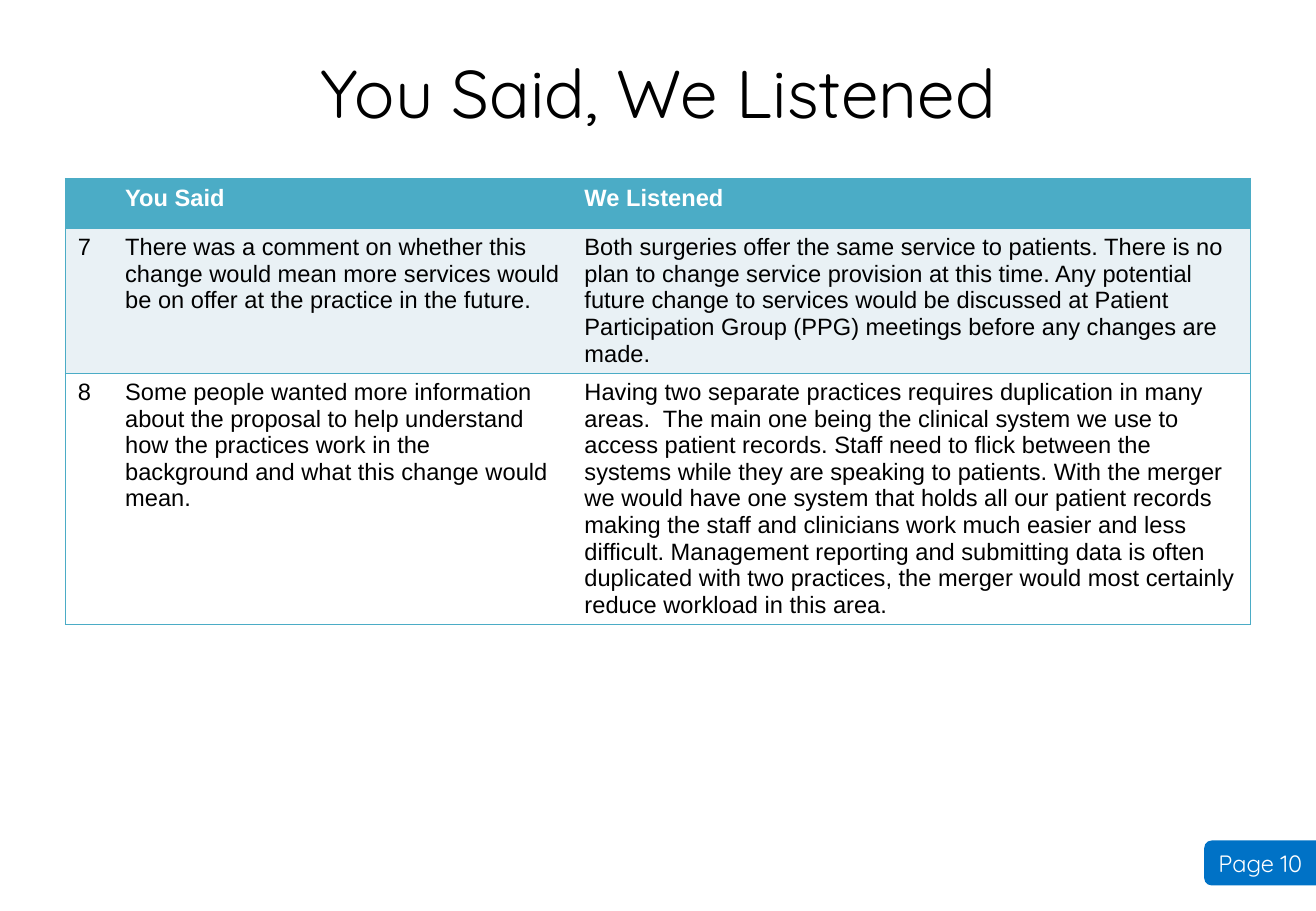
from lxml.etree import SubElement
from pptx import Presentation
from pptx.dml.color import RGBColor
from pptx.enum.shapes import MSO_SHAPE
from pptx.enum.text import MSO_ANCHOR, MSO_AUTO_SIZE, PP_ALIGN
from pptx.oxml.ns import qn
from pptx.util import Emu, Pt

EMU_PER_PX = 9144  # 100 px to the inch
TEAL, PALE, WHITE, BLACK, BLUE = "4BACC6", "E9F1F5", "FFFFFF", "000000", "0072C6"

COLUMN_WIDTHS = [39, 378, 558]
ROW_HEIGHTS = [41, 119, 207]
ROW_FILLS = [TEAL, PALE, WHITE]
FEEDBACK = [
    ["", "You Said", "We Listened"],
    [
        "7",
        "There was a comment on whether this change would mean more services "
        "would be on offer at the practice in the future.",
        "Both surgeries offer the same service to patients. There is no plan to "
        "change service provision at this time. Any potential future change to "
        "services would be discussed at Patient Participation Group (PPG) "
        "meetings before any changes are made.",
    ],
    [
        "8",
        "Some people wanted more information about the proposal to help "
        "understand how the practices work in the background and what this "
        "change would mean.",
        "Having two separate practices requires duplication in many areas.  The "
        "main one being the clinical system we use to access patient records. "
        "Staff need to flick between the systems while they are speaking to "
        "patients. With the merger we would have one system that holds all our "
        "patient records making the staff and clinicians work much easier and "
        "less difficult. Management reporting and submitting data is often "
        "duplicated with two practices, the merger would most certainly reduce "
        "workload in this area.",
    ],
]


def px(length):
    return Emu(length * EMU_PER_PX)


def color(value):
    return RGBColor.from_string(value)


def write(frame, text, font="Arial", size=14, fill=BLACK, bold=False,
          align=PP_ALIGN.LEFT):
    para = frame.paragraphs[0]
    para.alignment = align
    span = para.add_run()
    span.text = text
    span.font.name = font
    span.font.size = Pt(size)
    span.font.bold = bold
    span.font.color.rgb = color(fill)


def set_borders(cell, visible_sides):
    properties = cell._tc.get_or_add_tcPr()
    for side in "LRTB":
        line = SubElement(properties, qn(f"a:ln{side}"), w=str(Pt(1)))
        if side in visible_sides:
            paint = SubElement(line, qn("a:solidFill"))
            SubElement(paint, qn("a:srgbClr"), val=TEAL)
        else:
            SubElement(line, qn("a:noFill"))


def add_title(page, text):
    title = page.shapes.title
    title.left, title.top, title.width, title.height = map(px, (54, 13, 975, 125))
    title.text_frame.vertical_anchor = MSO_ANCHOR.MIDDLE
    write(title.text_frame, text, font="Quicksand", size=40, align=PP_ALIGN.CENTER)


def add_feedback_table(page):
    table = page.shapes.add_table(
        len(FEEDBACK), len(COLUMN_WIDTHS), px(54), px(147),
        px(sum(COLUMN_WIDTHS)), px(sum(ROW_HEIGHTS))).table
    table.horz_banding = False
    for column, width in zip(table.columns, COLUMN_WIDTHS):
        column.width = px(width)

    # Horizontal rules everywhere, vertical rules only on the outer edges
    for row_index, texts in enumerate(FEEDBACK):
        table.rows[row_index].height = px(ROW_HEIGHTS[row_index])
        header = row_index == 0
        for column_index, text in enumerate(texts):
            cell = table.cell(row_index, column_index)
            set_borders(cell, "TB" + ("L", "", "R")[column_index])
            cell.fill.solid()
            cell.fill.fore_color.rgb = color(ROW_FILLS[row_index])
            if text:
                write(cell.text_frame, text, fill=WHITE if header else BLACK,
                      bold=header)


def add_page_tag(page, text):
    tag = page.shapes.add_shape(
        MSO_SHAPE.ROUNDED_RECTANGLE, px(991), px(692), px(189), px(37))
    tag.shadow.inherit = False
    tag.fill.solid()
    tag.fill.fore_color.rgb = color(BLUE)
    tag.line.fill.background()
    tag.text_frame.word_wrap = True
    tag.text_frame.auto_size = MSO_AUTO_SIZE.SHAPE_TO_FIT_TEXT
    write(tag.text_frame, text, font="Quicksand", fill=WHITE)


def main():
    deck = Presentation()
    deck.slide_width, deck.slide_height = px(1083), px(750)
    page = deck.slides.add_slide(deck.slide_layouts[5])  # Title Only
    add_title(page, "You Said, We Listened")
    add_feedback_table(page)
    add_page_tag(page, "Page 10")
    deck.save("out.pptx")


if __name__ == "__main__":
    main()
